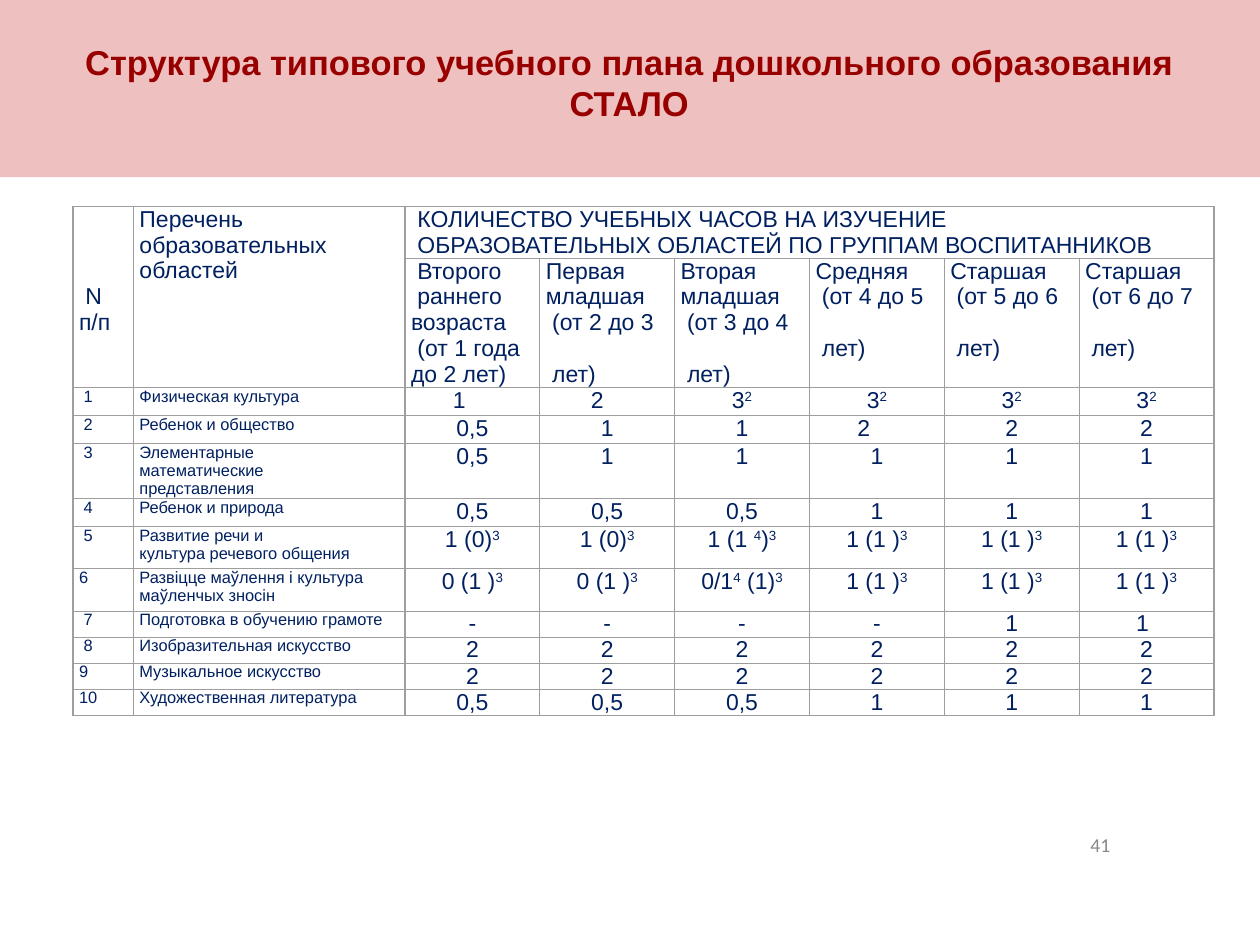
import pptx
import pptx.dml.color
import pptx.enum.shapes
import pptx.enum.text
import pptx.oxml
import pptx.oxml.ns
import pptx.util
from pptx.util import Cm

COLORS = {"band": "EEC0BF", "title": "980000", "table_text": "002060",
          "border": "9E9E9E", "number": "888888", "white": "FFFFFF"}
ALIGN = pptx.enum.text.PP_ALIGN
ANCHOR = pptx.enum.text.MSO_ANCHOR

COLUMN_WIDTHS = [1.3, 5.84] + [2.9] * 6
ROW_HEIGHTS = [1.11, 2.77, 0.6, 0.6, 1.18, 0.6, 0.91, 0.91] + [0.56] * 4

HOURS_HEADING = (" КОЛИЧЕСТВО УЧЕБНЫХ ЧАСОВ НА ИЗУЧЕНИЕ\v"
                 " ОБРАЗОВАТЕЛЬНЫХ ОБЛАСТЕЙ ПО ГРУППАМ ВОСПИТАННИКОВ")
# Each group: its name with the age range, then the closing line set lower.
GROUPS = [
    [" Второго\v раннего\vвозраста\v (от 1 года до 2 лет)"],
    ["Первая\vмладшая\v (от 2 до 3", " лет)"],
    ["Вторая\vмладшая\v (от 3 до 4", " лет)"],
    ["Средняя\v (от 4 до 5", " лет)"],
    ["Старшая\v (от 5 до 6", " лет)"],
    ["Старшая\v (от 6 до 7", " лет)"],
]
# The character after ^ is a superscript.
SUBJECTS = [
    (" 1", "Физическая культура", ["1", "2", "3^2", "3^2", "3^2", "3^2"]),
    (" 2", "Ребенок и общество", ["0,5", "1", "1", "2", "2", "2"]),
    (" 3", "Элементарные\vматематические\vпредставления", ["0,5"] + ["1"] * 5),
    (" 4", "Ребенок и природа", ["0,5"] * 3 + ["1"] * 3),
    (" 5", "Развитие речи и\vкультура речевого общения",
     ["1 (0)^3"] * 2 + ["1 (1 ^4)^3"] + ["1 (1 )^3"] * 3),
    ("6", "Развіцце маўлення і культура маўленчых зносін",
     ["0 (1 )^3"] * 2 + ["0/1^4 (1)^3"] + ["1 (1 )^3"] * 3),
    (" 7", "Подготовка в обучению грамоте", ["-"] * 4 + ["1"] * 2),
    (" 8", "Изобразительная искусство", ["2"] * 6),
    ("9", "Музыкальное искусство", ["2"] * 6),
    ("10", "Художественная литература", ["0,5"] * 3 + ["1"] * 3),
]
# Extra right margin in cm of the values that sit left of centre: (row, column).
RIGHT_SHIFTS = {(2, 2): 0.56, (2, 3): 0.43, (3, 5): 0.56, (8, 7): 0.17}


def rgb(name):
    return pptx.dml.color.RGBColor.from_string(COLORS[name])


def format_paragraph(paragraph, size, color, font="Arial", bold=False, align=ALIGN.LEFT):
    paragraph.alignment = align
    paragraph.font.name = font
    paragraph.font.size = pptx.util.Pt(size)
    paragraph.font.bold = bold
    paragraph.font.color.rgb = rgb(color)


def add_marked_text(paragraph, text):
    """Add text in which ^ raises the next character."""
    plain, *raised = text.split("^")
    paragraph.add_run().text = plain
    for part in raised:
        run = paragraph.add_run()
        run.text = part[0]
        run._r.get_or_add_rPr().set("baseline", "30000")
        if part[1:]:
            paragraph.add_run().text = part[1:]


def style_cell(cell):
    cell.margin_left = cell.margin_right = Cm(0.13)
    cell.margin_top = cell.margin_bottom = 0
    properties = cell._tc.get_or_add_tcPr()
    for side in ("lnL", "lnR", "lnT", "lnB"):
        properties.append(pptx.oxml.parse_xml(
            f'<a:{side} {pptx.oxml.ns.nsdecls("a")} w="9525"><a:solidFill>'
            f'<a:srgbClr val="{COLORS["border"]}"/></a:solidFill></a:{side}>'))
    cell.fill.solid()
    cell.fill.fore_color.rgb = rgb("white")


def fill_cell(cell, texts, size=14, align=ALIGN.LEFT):
    """Write one paragraph per text; later ones stand one line lower."""
    for index, text in enumerate(texts):
        frame = cell.text_frame
        paragraph = frame.add_paragraph() if index else frame.paragraphs[0]
        if "^" in text:
            add_marked_text(paragraph, text)
        else:
            paragraph.text = text
        format_paragraph(paragraph, size, "table_text", align=align)
        if index:
            paragraph.space_before = pptx.util.Pt(16)


def add_title_band(slide, left, top, width, height):
    band = slide.shapes.add_shape(pptx.enum.shapes.MSO_SHAPE.RECTANGLE,
                                  left, top, width, height)
    band.shadow.inherit = False
    band.fill.solid()
    band.fill.fore_color.rgb = rgb("band")
    band.line.fill.background()
    frame = band.text_frame
    frame.word_wrap = True
    frame.vertical_anchor = ANCHOR.MIDDLE
    frame.text = "Структура типового учебного плана дошкольного образования\nСТАЛО"
    for paragraph in frame.paragraphs:
        format_paragraph(paragraph, 21, "title", bold=True, align=ALIGN.CENTER)


def add_curriculum_table(slide, left, top):
    table = slide.shapes.add_table(
        len(ROW_HEIGHTS), len(COLUMN_WIDTHS), left, top,
        Cm(sum(COLUMN_WIDTHS)), Cm(sum(ROW_HEIGHTS))).table
    table.first_row = table.horz_banding = False
    for column, width in zip(table.columns, COLUMN_WIDTHS):
        column.width = Cm(width)
    for row, height in zip(table.rows, ROW_HEIGHTS):
        row.height = Cm(height)
    for cell in table.iter_cells():
        style_cell(cell)

    table.cell(0, 0).merge(table.cell(1, 0))
    table.cell(0, 1).merge(table.cell(1, 1))
    table.cell(0, 2).merge(table.cell(0, 7))
    fill_cell(table.cell(0, 0), [" N\vп/п"])
    table.cell(0, 0).margin_top = Cm(1.66)
    fill_cell(table.cell(0, 1), ["Перечень образовательных областей"])
    fill_cell(table.cell(0, 2), [HOURS_HEADING])
    for column, group in enumerate(GROUPS, start=2):
        fill_cell(table.cell(1, column), group)

    for row, (number, subject, hours) in enumerate(SUBJECTS, start=2):
        fill_cell(table.cell(row, 0), [number], size=10)
        fill_cell(table.cell(row, 1), [subject], size=10)
        for column, value in enumerate(hours, start=2):
            fill_cell(table.cell(row, column), [value], align=ALIGN.CENTER)
    for (row, column), shift in RIGHT_SHIFTS.items():
        table.cell(row, column).margin_right += Cm(shift)


def add_slide_number(slide, left, top, width, height):
    frame = slide.shapes.add_textbox(left, top, width, height).text_frame
    frame.word_wrap = True
    frame.vertical_anchor = ANCHOR.MIDDLE
    frame.text = "41"
    format_paragraph(frame.paragraphs[0], 12, "number", font="Calibri", align=ALIGN.RIGHT)


def main():
    presentation = pptx.Presentation()
    presentation.slide_width = Cm(27.1)
    presentation.slide_height = Cm(20.32)
    slide = presentation.slides.add_slide(presentation.slide_layouts[6])
    add_title_band(slide, Cm(-0.36), Cm(-0.28), Cm(27.79), Cm(4.09))
    add_curriculum_table(slide, Cm(1.57), Cm(4.44))
    add_slide_number(slide, Cm(18.21), Cm(17.65), Cm(5.92), Cm(1.02))
    presentation.save("out.pptx")


if __name__ == "__main__":
    main()
